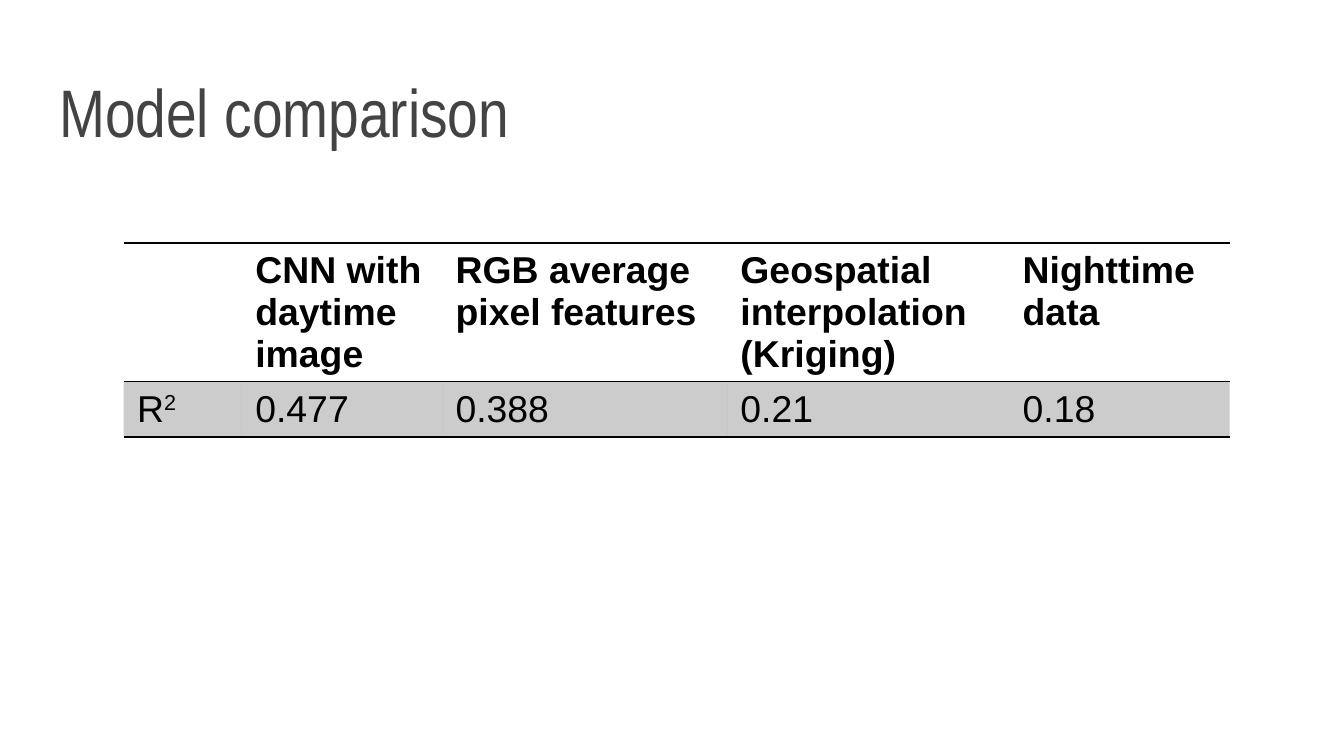
from lxml.etree import SubElement
from pptx import Presentation
from pptx.dml.color import RGBColor
from pptx.enum.text import MSO_ANCHOR, MSO_AUTO_SIZE, PP_ALIGN
from pptx.oxml import parse_xml
from pptx.oxml.ns import nsdecls, qn
from pptx.util import Inches, Pt


def color(value):
    return RGBColor.from_string(value)


def add_border(cell, side, position):
    line = parse_xml(
        f'<a:{side} {nsdecls("a")} w="12700"><a:solidFill>'
        f'<a:srgbClr val="000000"/></a:solidFill></a:{side}>')
    cell._tc.get_or_add_tcPr().insert(position, line)


# Widescreen page, 16:9
deck = Presentation()
deck.slide_width, deck.slide_height = Inches(10), Inches(10 * 9 / 16)
page = deck.slides.add_slide(deck.slide_layouts[5])

# Title
title = page.shapes.title
title.left, title.top = Inches(0.34), Inches(0.49)
title.width, title.height = Inches(9.32), Inches(0.63)
frame = title.text_frame
frame.text = "Model comparison"
frame.word_wrap = True
frame.auto_size = MSO_AUTO_SIZE.NONE
frame.vertical_anchor = MSO_ANCHOR.TOP
frame.margin_left = frame.margin_right = Inches(0.1)
frame.margin_top = frame.margin_bottom = Inches(0.1)
para = frame.paragraphs[0]
para.alignment = PP_ALIGN.LEFT
para.line_spacing = 0.9
font = para.runs[0].font
font.name, font.size = "Arial Narrow", Pt(36)
font.color.rgb = color("434343")

# Table grid, with the plain unstyled look
rows = [
    ["", "CNN with daytime image", "RGB average pixel features",
     "Geospatial interpolation\n(Kriging)", "Nighttime data"],
    ["R", "0.477", "0.388", "0.21", "0.18"],
]
widths = [0.88, 1.49, 2.12, 2.1, 1.64]
heights = [1.02, 0.41]
table = page.shapes.add_table(
    len(rows), len(widths), Inches(0.92), Inches(1.81),
    Inches(sum(widths)), Inches(sum(heights))).table
table.first_row = table.horz_banding = False
style = table._tbl.tblPr.find(qn("a:tableStyleId"))
style.text = "{2D5ABB26-0587-4C30-8999-92F81FD0307C}"
for column, width in zip(table.columns, widths):
    column.width = Inches(width)
for row, height in zip(table.rows, heights):
    row.height = Inches(height)

# Superscript of the R² label
label = table.cell(1, 0).text_frame.paragraphs[0]
label.add_run().text = rows[1][0]
exponent = label.add_run()
exponent.text = "2"
exponent.font._element.set("baseline", "30000")

# Cell text, fills and rules
for r, texts in enumerate(rows):
    for c, text in enumerate(texts):
        cell = table.cell(r, c)
        if (r, c) != (1, 0):
            cell.text = text
        for para in cell.text_frame.paragraphs:
            for item in [para, *para.runs]:
                item.font.name, item.font.size = "Arial", Pt(20)
                item.font.bold = r == 0
                item.font.color.rgb = color("000000")
        if r == 0:
            cell.fill.background()
        else:
            cell.fill.solid()
            cell.fill.fore_color.rgb = color("000000")
            shade = cell._tc.tcPr.find(".//" + qn("a:srgbClr"))
            SubElement(shade, qn("a:alpha")).set("val", "20000")
        add_border(cell, "lnT", 0)
        add_border(cell, "lnB", 1)

deck.save("out.pptx")
